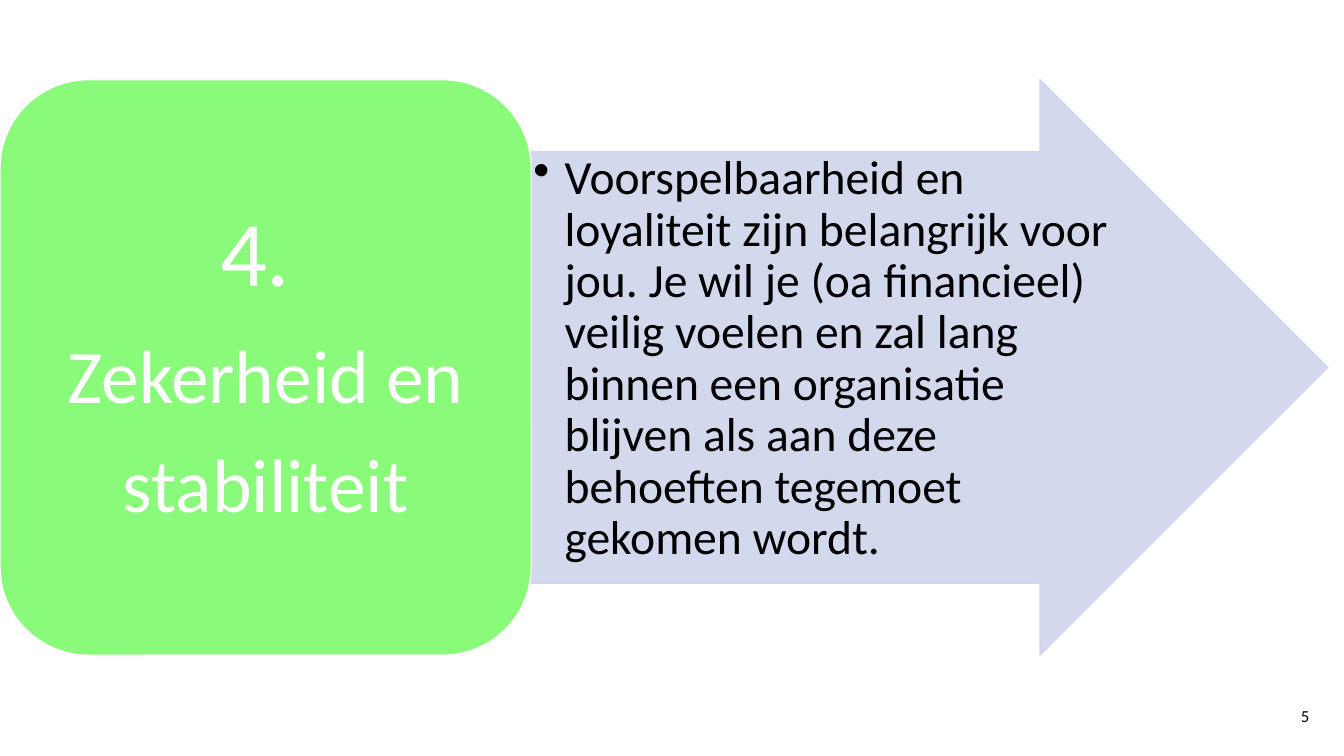
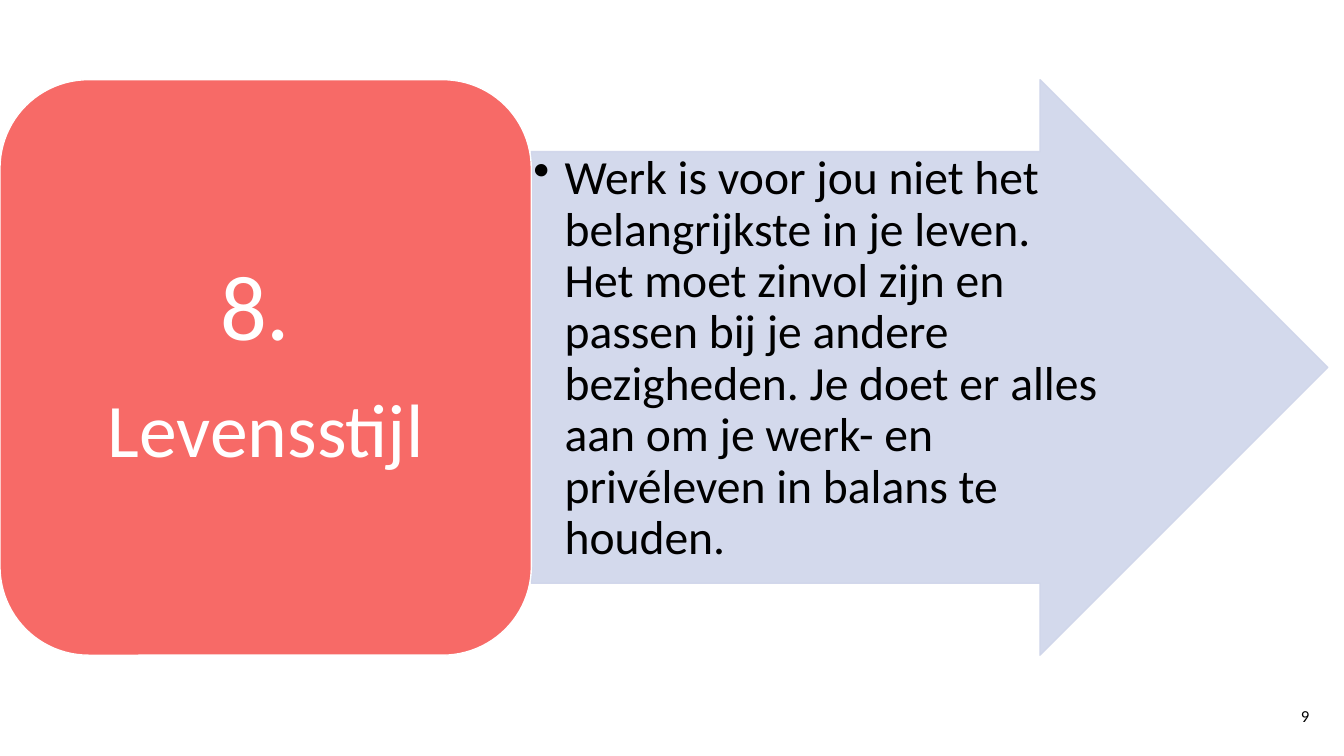
"""Build two career-value slides: a coloured value card beside an arrow with its explanation."""
import pptx
import pptx.dml.color
import pptx.enum.shapes
import pptx.enum.text
import pptx.oxml.ns
import pptx.util
from lxml import etree

Inches = pptx.util.Inches
Pt = pptx.util.Pt
SHAPE = pptx.enum.shapes.MSO_SHAPE
ANCHOR = pptx.enum.text.MSO_ANCHOR
ALIGN = pptx.enum.text.PP_ALIGN
qn = pptx.oxml.ns.qn

FONT = "Calibri"
BLACK, WHITE, ARROW_BLUE = "000000", "FFFFFF", "CFD5EA"
CARD_WIDTH, BAND_TOP, BAND_HEIGHT = 5.27, 0.79, 5.71
NUMBER_SIZE, NAME_SIZE = 66, 54

values = [
    ("5", "89FA7A", ["4. ", "Zekerheid en", "stabiliteit"],
     "Voorspelbaarheid en loyaliteit zijn belangrijk voor jou. Je wil je (oa financieel) "
     "veilig voelen en zal lang binnen een organisatie blijven als aan deze behoeften "
     "tegemoet gekomen wordt."),
    ("9", "F76A67", ["8. ", "Levensstijl"],
     "Werk is voor jou niet het belangrijkste in je leven. Het moet zinvol zijn en passen "
     "bij je andere bezigheden. Je doet er alles aan om je werk- en privéleven in balans "
     "te houden."),
]


def paint(color_format, hex_color, alpha=None):
    """Set a colour from a hex string, with an optional opacity in percent."""
    color_format.rgb = pptx.dml.color.RGBColor.from_string(hex_color)
    if alpha is not None:
        srgb = next(color_format._xFill.iter(qn("a:srgbClr")))
        etree.SubElement(srgb, qn("a:alpha")).set("val", str(alpha * 1000))


def add_block(slide, preset, left, width, fill, line, insets, alpha=None):
    """Add a band-high shape with a flat fill, a thin line and set text margins."""
    block = slide.shapes.add_shape(
        preset, Inches(left), Inches(BAND_TOP), Inches(width), Inches(BAND_HEIGHT))
    block.shadow.inherit = False
    block.fill.solid()
    paint(block.fill.fore_color, fill)
    block.line.width = Pt(1)
    paint(block.line.color, line)
    if alpha is not None:
        for srgb in block._element.spPr.iter(qn("a:srgbClr")):
            etree.SubElement(srgb, qn("a:alpha")).set("val", str(alpha * 1000))
    frame = block.text_frame
    frame.word_wrap = True
    frame.margin_left = frame.margin_right = Inches(insets[0])
    frame.margin_top = frame.margin_bottom = Inches(insets[1])
    return block


prs = pptx.Presentation()
prs.slide_width, prs.slide_height = Inches(13.33), Inches(7.5)

for page, card_color, card_lines, explanation in values:
    slide = prs.slides.add_slide(prs.slide_layouts[6])

    page_number = slide.shapes.add_textbox(Inches(12.55), Inches(6.7), Inches(0.79), Inches(0.8))
    page_number.text_frame.word_wrap = True
    page_number.text_frame.vertical_anchor = ANCHOR.MIDDLE
    page_line = page_number.text_frame.paragraphs[0]
    page_line.text = page
    page_line.alignment = ALIGN.CENTER

    arrow = add_block(slide, SHAPE.RIGHT_ARROW, CARD_WIDTH, 7.9,
                      ARROW_BLUE, ARROW_BLUE, (0.02, 0.02), alpha=90)
    arrow.adjustments[0], arrow.adjustments[1] = 0.75, 0.5
    arrow.text_frame.vertical_anchor = ANCHOR.TOP
    bullet_line = arrow.text_frame.paragraphs[0]
    bullet_line.text = explanation
    bullet_line.alignment = ALIGN.LEFT
    bullet_line.line_spacing = 0.9
    bullet_format = bullet_line._p.get_or_add_pPr()
    bullet_format.set("marL", str(Inches(0.31)))
    bullet_format.set("indent", str(-Inches(0.31)))
    etree.SubElement(bullet_format, qn("a:buChar")).set("char", "•")

    card = add_block(slide, SHAPE.ROUNDED_RECTANGLE, 0, CARD_WIDTH,
                     card_color, WHITE, (0.28, 0.14))
    card.text_frame.vertical_anchor = ANCHOR.MIDDLE
    card.text_frame.text = "\n".join(card_lines)
    styled = [(page_line, 12, BLACK), (bullet_line, 34, BLACK)]
    for index, card_line in enumerate(card.text_frame.paragraphs):
        size = NAME_SIZE if index else NUMBER_SIZE
        card_line.alignment = ALIGN.CENTER
        card_line.line_spacing = 0.9
        if index < len(card_lines) - 1:
            card_line.space_after = Pt(round(0.35 * size))
        styled.append((card_line, size, WHITE))

    for paragraph, size, color in styled:
        for run in paragraph.runs:
            run.font.name = FONT
            run.font.size = Pt(size)
            paint(run.font.color, color)

prs.save("out.pptx")
